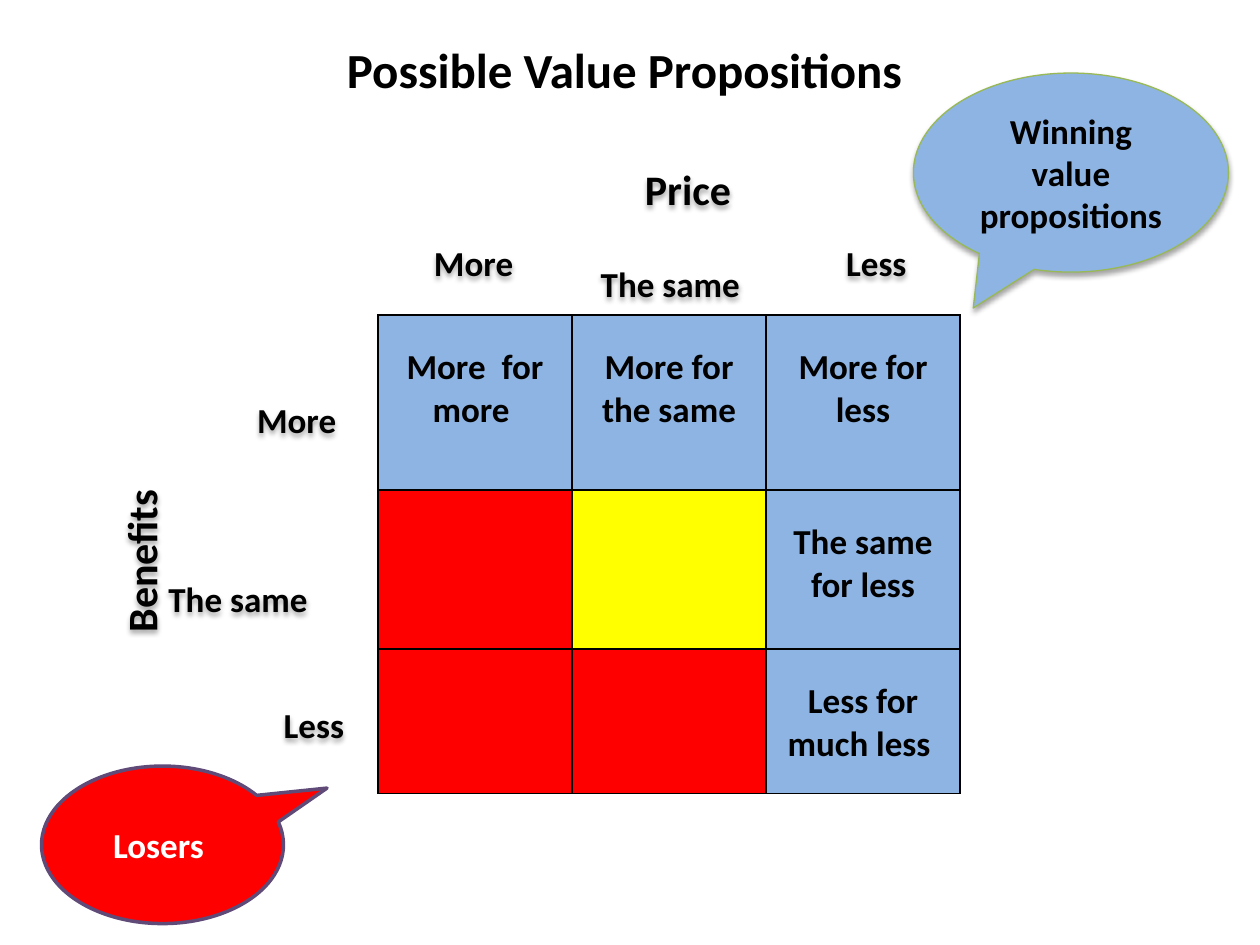
from lxml import etree
from pptx import Presentation
from pptx.dml.color import RGBColor
from pptx.enum.shapes import MSO_SHAPE
from pptx.enum.text import MSO_ANCHOR, PP_ALIGN
from pptx.oxml import parse_xml
from pptx.oxml.ns import nsdecls, qn
from pptx.util import Inches, Pt

MID = MSO_ANCHOR.MIDDLE
CENTER, RIGHT = PP_ALIGN.CENTER, PP_ALIGN.RIGHT
BUBBLE = MSO_SHAPE.OVAL_CALLOUT
TITLE_ONLY = 5

THEME = {
    "font": "Calibri", "title": 28, "axis": 24, "body": 20,
    "win": "8EB4E3", "lose": "FF0000", "even": "FFFF00",
    "ink": "000000", "light": "FFFFFF", "green": "98B955", "purple": "5F4A78",
}

TITLE = "Possible Value Propositions "
# Each cell: text, kind
GRID = [
    [("More  for more ", "win"), ("More for the same", "win"), ("More for less", "win")],
    [("", "lose"), ("", "even"), ("The same for less", "win")],
    [("", "lose"), ("", "lose"), ("Less for much less ", "win")],
]
GRID_LEFT, GRID_TOP, COL_WIDTH = 3, 2.5, 1.54
ROW_HEIGHTS = [1.39, 1.26, 1.15]

# Each label: text, box, size, alignment, rotation
LABELS = [
    ("Price", (4.75, 1.25, 1.42, 0.5), "axis", CENTER, 0),
    ("More ", (3.08, 1.83, 1.42, 0.5), "body", CENTER, 0),
    ("The same", (4.61, 2, 1.42, 0.5), "body", CENTER, 0),
    ("Less", (6.33, 1.83, 1.25, 0.5), "body", CENTER, 0),
    ("More ", (1.33, 3.08, 1.5, 0.5), "body", RIGHT, 0),
    ("The same", (0.96, 4.5, 1.58, 0.5), "body", RIGHT, 0),
    ("Less", (1.33, 5.5, 1.5, 0.5), "body", RIGHT, 0),
    ("Benefits ", (-0.05, 4.13, 2.33, 0.57), "axis", CENTER, 270),
]
# Each callout: text, box, tip, fill, line, line width, ink, has shadow
CALLOUTS = [
    ("Winning value propositions", (7.25, 0.58, 2.5, 1.58), (-0.31, 0.68),
     "win", "green", 0.75, "ink", True),
    ("Losers ", (0.33, 6.08, 1.92, 1.25), (0.68, -0.36),
     "lose", "purple", 2, "light", False),
]


def color(name):
    return RGBColor.from_string(THEME[name])


def inches(box):
    return [Inches(n) for n in box]


def write(frame, text, size="body", align=CENTER, ink="ink"):
    frame.word_wrap = True
    para = frame.paragraphs[0]
    para.text = text
    para.alignment = align
    font = para.font
    font.name, font.size, font.bold = THEME["font"], Pt(THEME[size]), True
    font.color.rgb = color(ink)


def cast(shape):
    """Give the shape, or the text of an unfilled box, a soft drop shadow."""
    shape.shadow.inherit = False
    effects = shape._element.spPr.find(qn("a:effectLst"))
    effects.append(parse_xml(
        f'<a:outerShdw {nsdecls("a")} blurRad="{Pt(3.1)}" dist="{Pt(1.8)}" '
        'dir="5400000" rotWithShape="0"><a:srgbClr val="000000">'
        '<a:alpha val="35000"/></a:srgbClr></a:outerShdw>'))


def edge(cell):
    """Draw a thin line on all four sides of a cell."""
    props = cell._tc.get_or_add_tcPr()
    for spot, side in enumerate(("lnL", "lnR", "lnT", "lnB")):
        line = etree.Element(qn(f"a:{side}"), w=str(Pt(1)))
        fill = etree.SubElement(line, qn("a:solidFill"))
        etree.SubElement(fill, qn("a:srgbClr"), val=THEME["ink"])
        props.insert(spot, line)


def add_grid(slide):
    cols = len(GRID[0])
    box = (GRID_LEFT, GRID_TOP, cols * COL_WIDTH, sum(ROW_HEIGHTS))
    table = slide.shapes.add_table(len(GRID), cols, *inches(box)).table
    for col in table.columns:
        col.width = Inches(COL_WIDTH)
    for r, row in enumerate(GRID):
        table.rows[r].height = Inches(ROW_HEIGHTS[r])
        for c, (text, kind) in enumerate(row):
            cell = table.cell(r, c)
            cell.fill.solid()
            cell.fill.fore_color.rgb = color(kind)
            cell.margin_top = Inches(0.25)
            edge(cell)
            if text:
                write(cell.text_frame, text)


def add_callout(slide, text, box, tip, fill, line, width, ink, shadow):
    shape = slide.shapes.add_shape(BUBBLE, *inches(box))
    shape.adjustments[0], shape.adjustments[1] = tip
    shape.fill.solid()
    shape.fill.fore_color.rgb = color(fill)
    shape.line.color.rgb = color(line)
    shape.line.width = Pt(width)
    shape.shadow.inherit = False
    if shadow:
        cast(shape)
    shape.text_frame.vertical_anchor = MID
    write(shape.text_frame, text, ink=ink)


def add_label(slide, text, box, size, align, turn):
    shape = slide.shapes.add_textbox(*inches(box))
    shape.rotation = turn
    shape.text_frame.vertical_anchor = MID
    write(shape.text_frame, text, size, align)
    cast(shape)


def main():
    deck = Presentation()
    deck.slide_width, deck.slide_height = Inches(10), Inches(7.5)
    slide = deck.slides.add_slide(deck.slide_layouts[TITLE_ONLY])
    title = slide.shapes.title
    title.left, title.top, title.width, title.height = inches((0.5, 0.17, 9, 0.75))
    title.text_frame.vertical_anchor = MID
    write(title.text_frame, TITLE, "title")
    add_grid(slide)
    for item in CALLOUTS:
        add_callout(slide, *item)
    for item in LABELS:
        add_label(slide, *item)
    deck.save("out.pptx")


if __name__ == "__main__":
    main()
